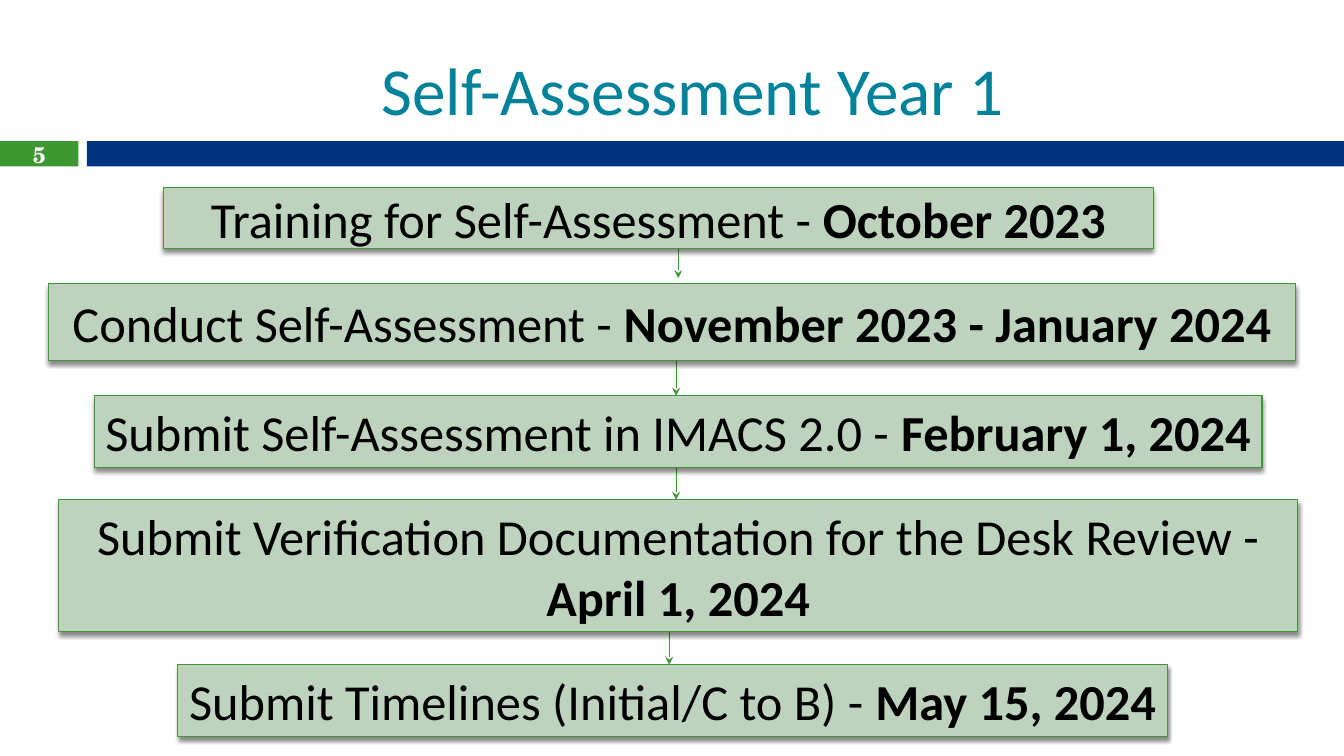
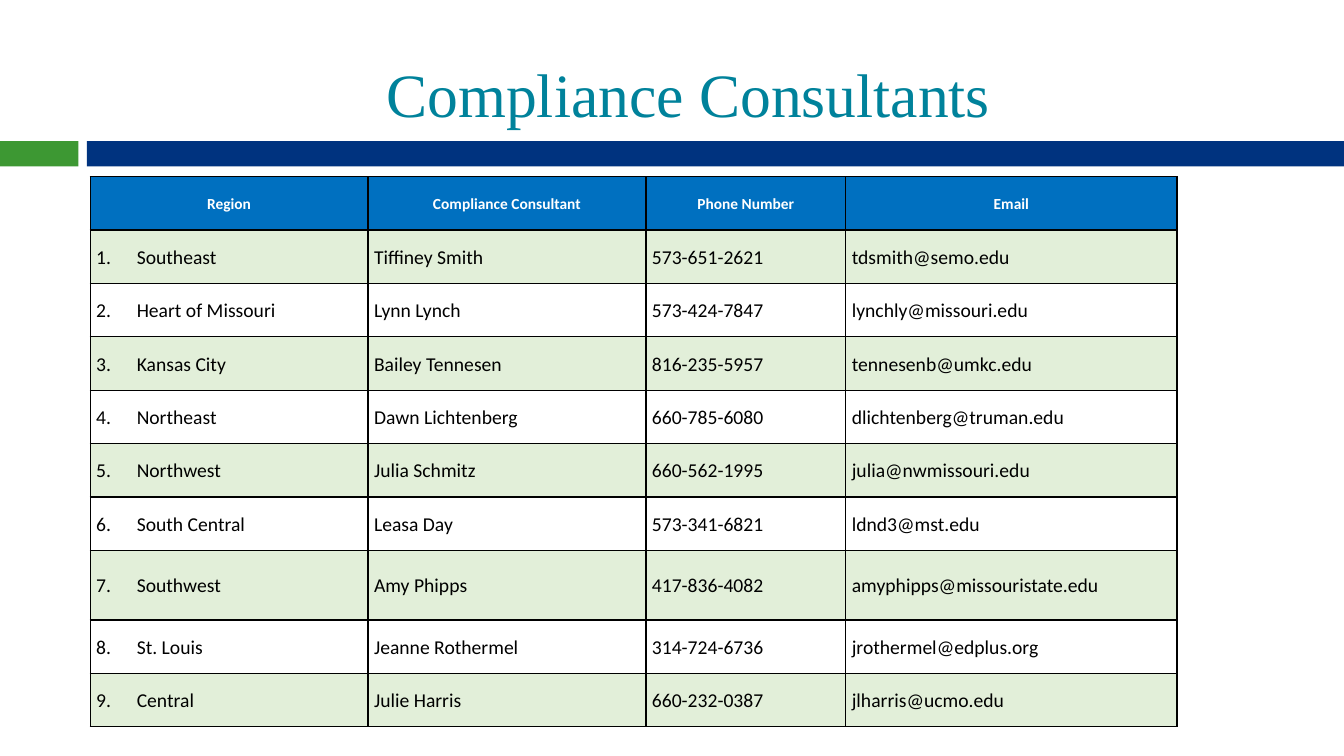
"""Build the self-assessment timeline slide and the compliance consultant table."""
from lxml.etree import SubElement
from pptx import Presentation
from pptx.dml.color import RGBColor
from pptx.enum.shapes import MSO_CONNECTOR, MSO_SHAPE
from pptx.enum.text import MSO_ANCHOR, MSO_AUTO_SIZE, PP_ALIGN
from pptx.oxml import parse_xml
from pptx.oxml.ns import nsdecls, qn
from pptx.util import Pt

GREEN, NAVY, TEAL, SAGE = "3D9833", "00337F", "00829B", "BED3BD"
HEADER_BLUE, PALE_GREEN = "0070C0", "E2EFD9"
BLACK, WHITE = "000000", "FFFFFF"
BODY_FONT, NUMBER_FONT, SERIF_FONT = "Calibri", "TeX Gyre Schola", "Times New Roman"
BAND_TOP, BAND_HEIGHT = 100.8, 18


def write(para, text, size=36, font=BODY_FONT, color=BLACK, bold=False, align=PP_ALIGN.CENTER):
    span = para.add_run()
    span.text = text
    span.font.size = Pt(size)
    span.font.name = font
    span.font.bold = bold
    span.font.color.rgb = RGBColor.from_string(color)
    para.alignment = align


def add_rectangle(page, left, top, width, height, fill, line=None):
    box = page.shapes.add_shape(MSO_SHAPE.RECTANGLE, Pt(left), Pt(top), Pt(width), Pt(height))
    box.shadow.inherit = False
    box.fill.solid()
    box.fill.fore_color.rgb = RGBColor.from_string(fill)
    if line:
        box.line.color.rgb = RGBColor.from_string(line)
        box.line.width = Pt(0.79)
    else:
        box.line.fill.background()
    return box


deck = Presentation()
deck.slide_width, deck.slide_height = Pt(960), Pt(540)
layout = deck.slide_layouts[5]

titles = [
    ("Self-Assessment Year 1", 168.5, 642, 18, 48, BODY_FONT),
    ("Compliance Consultants", 64, 856, 7.2, 44, SERIF_FONT),
]
pages = []
for text, left, width, margin, size, font in titles:
    page = deck.slides.add_slide(layout)
    title = page.shapes.title
    title.left, title.top, title.width, title.height = Pt(left), Pt(18), Pt(width), Pt(78)
    frame = title.text_frame
    frame.auto_size = MSO_AUTO_SIZE.NONE
    frame.vertical_anchor = MSO_ANCHOR.BOTTOM
    frame.margin_left = Pt(margin)
    write(frame.paragraphs[0], text, size=size, font=font, color=TEAL)
    pages.append(page)
timeline, contacts = pages

for left, width, color in [(0, 56, GREEN), (62, 898, NAVY)]:
    band = add_rectangle(timeline, left, BAND_TOP, width, BAND_HEIGHT, color)
    layout.shapes.element.append(band.element)

steps = [
    ("Training for Self-Assessment - ", "October 2023", 116.8, 133.9, 707, 43.5),
    ("Conduct Self-Assessment - ", "November 2023 - January 2024", 34.6, 202.7, 891, 55),
    ("Submit Self-Assessment in IMACS 2.0 - ", "February 1, 2024", 67.5, 282.7, 834, 51),
    ("Submit Verification Documentation for the Desk Review - ", "April 1, 2024", 42, 357, 885, 94.2),
    ("Submit Timelines (Initial/C to B) - ", "May 15, 2024", 127, 474.8, 707, 51),
]
arrow_tips = [(484.5, 198.7), (483, 282.7), (483, 357), (478, 474.8)]

for x, tip in arrow_tips:
    arrow = timeline.shapes.add_connector(MSO_CONNECTOR.STRAIGHT, Pt(x), Pt(tip - 44), Pt(x), Pt(tip))
    arrow.line.color.rgb = RGBColor.from_string(GREEN)
    arrow.line.width = Pt(0.79)
    SubElement(arrow.line._get_or_add_ln(), qn("a:tailEnd"), type="stealth")
    SubElement(arrow.element.spPr, qn("a:effectLst"))

for action, date, left, top, width, height in steps:
    box = add_rectangle(timeline, left, top, width, height, SAGE, line=GREEN)
    box.element.spPr.find(qn("a:effectLst")).append(parse_xml(
        f'<a:outerShdw {nsdecls("a")} blurRad="{Pt(3)}" dist="{Pt(2.4)}" dir="5400000" rotWithShape="0">'
        f'<a:srgbClr val="{BLACK}"><a:alpha val="45000"/></a:srgbClr></a:outerShdw>'))
    frame = box.text_frame
    frame.word_wrap = True
    frame.vertical_anchor = MSO_ANCHOR.MIDDLE
    write(frame.paragraphs[0], action)
    write(frame.paragraphs[0], date, bold=True)

number_box = timeline.shapes.add_textbox(Pt(0), Pt(BAND_TOP), Pt(56), Pt(19.4))
number_box.text_frame.word_wrap = True
number_box.text_frame.vertical_anchor = MSO_ANCHOR.MIDDLE
write(number_box.text_frame.paragraphs[0], "5", size=16, font=NUMBER_FONT, color=WHITE, bold=True)

rows = [
    ("Region", "Compliance Consultant", "Phone Number", "Email"),
    ("Southeast", "Tiffiney Smith", "573-651-2621", "tdsmith@semo.edu"),
    ("Heart of Missouri", "Lynn Lynch", "573-424-7847", "lynchly@missouri.edu"),
    ("Kansas City", "Bailey Tennesen", "816-235-5957", "tennesenb@umkc.edu"),
    ("Northeast", "Dawn Lichtenberg", "660-785-6080", "dlichtenberg@truman.edu"),
    ("Northwest", "Julia Schmitz", "660-562-1995", "julia@nwmissouri.edu"),
    ("South Central", "Leasa Day", "573-341-6821", "ldnd3@mst.edu"),
    ("Southwest", "Amy Phipps", "417-836-4082", "amyphipps@missouristate.edu"),
    ("St. Louis", "Jeanne Rothermel", "314-724-6736", "jrothermel@edplus.org"),
    ("Central", "Julie Harris", "660-232-0387", "jlharris@ucmo.edu"),
]
column_widths = [198.5, 198.5, 142.8, 236.6]
row_heights = [49.8 if row[0] == "Southwest" else 38.15 for row in rows]
table = contacts.shapes.add_table(
    len(rows), len(column_widths), Pt(64.4), Pt(126.2), Pt(sum(column_widths)), Pt(sum(row_heights))).table
table.first_row = table.horz_banding = False
for column, width in zip(table.columns, column_widths):
    column.width = Pt(width)

for row_index, row in enumerate(rows):
    table.rows[row_index].height = Pt(row_heights[row_index])
    for column_index, text in enumerate(row):
        cell = table.cell(row_index, column_index)
        cell.margin_left = cell.margin_right = Pt(4.3)
        cell.margin_top = cell.margin_bottom = Pt(0)
        cell.vertical_anchor = MSO_ANCHOR.MIDDLE
        for side in ("lnL", "lnR", "lnT", "lnB"):
            cell._tc.get_or_add_tcPr().append(parse_xml(
                f'<a:{side} {nsdecls("a")} w="{Pt(1)}"><a:solidFill><a:srgbClr val="{BLACK}"/>'
                f'</a:solidFill></a:{side}>'))
        if row_index == 0 or row_index % 2:
            cell.fill.solid()
            cell.fill.fore_color.rgb = RGBColor.from_string(PALE_GREEN if row_index else HEADER_BLUE)
        else:
            cell.fill.background()
        para = cell.text_frame.paragraphs[0]
        if row_index and column_index == 0:
            properties = para._p.get_or_add_pPr()
            properties.set("marL", str(Pt(29)))
            properties.set("indent", str(Pt(-29)))
            SubElement(SubElement(properties, qn("a:buClr")), qn("a:srgbClr"), val=BLACK)
            SubElement(properties, qn("a:buAutoNum"), type="arabicPeriod", startAt=str(row_index))
        para.line_spacing = 1.07
        if row_index == 0:
            write(para, text, size=11, color=WHITE, bold=True)
        else:
            write(para, text, size=14, align=PP_ALIGN.LEFT)

deck.save("out.pptx")
